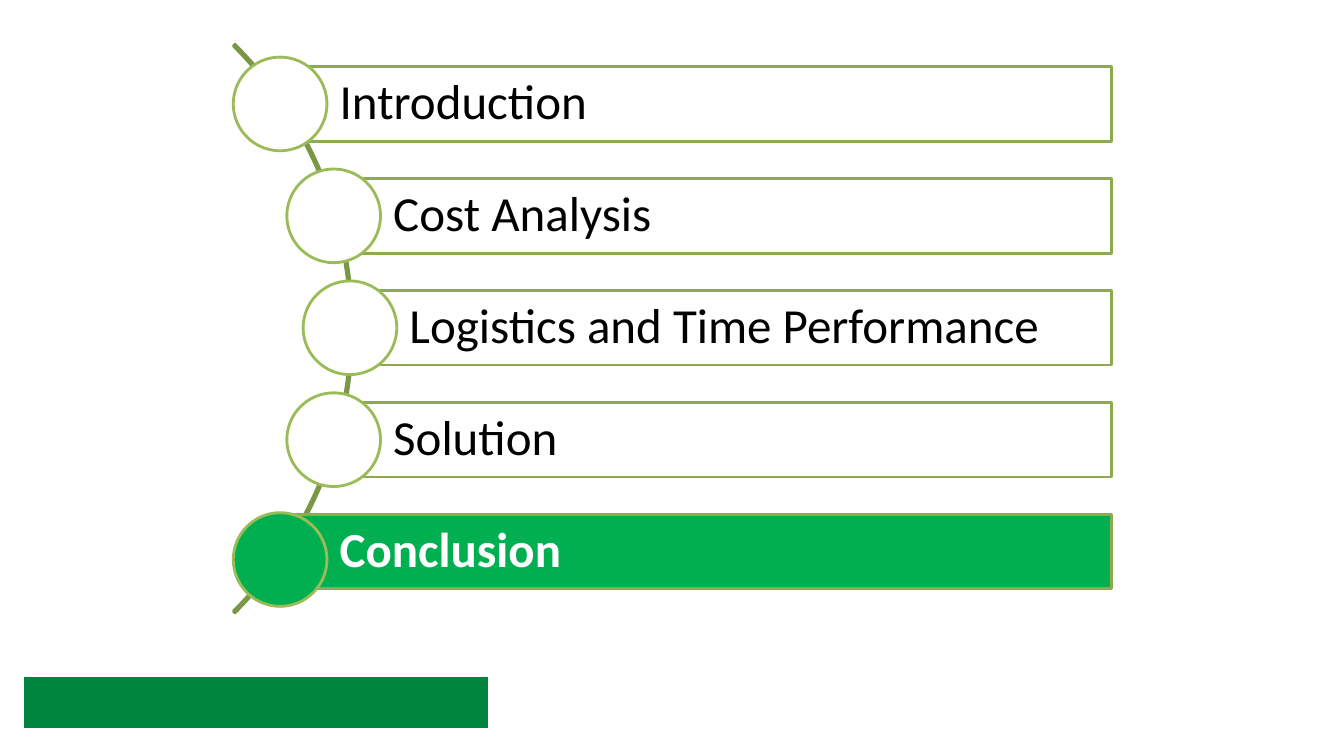
"""Build an agenda slide with five steps along an arc, the last one highlighted."""
import dataclasses

import pptx
import pptx.dml.color
import pptx.enum.shapes
import pptx.enum.text
import pptx.shapes.autoshape
import pptx.slide
import pptx.util

Cm = pptx.util.Cm
Kind = pptx.enum.shapes.MSO_SHAPE

COLOURS = {
    "white": "FFFFFF",
    "black": "000000",
    "highlight": "00B050",
    "footer": "00853E",
    "arc": "7C9647",
    "bar_line": "8DAA51",
    "circle_line": "9BBB59",
}
FONT = "Calibri"
BAR_TOP, BAR_PITCH, BAR_HEIGHT, BAR_RIGHT = 1.68, 2.82, 1.88, 28.01
CIRCLE_SIZE = 2.36
ARC_CENTRE_X, ARC_CENTRE_Y, ARC_RADIUS = -1.24, 8.28, 10.13


@dataclasses.dataclass(frozen=True)
class Step:
    """One agenda entry: its label, bar position and emphasis."""

    label: str
    left: float
    active: bool = False
    circle_drop: float = 0


STEPS = (
    Step("Introduction", 7.06),
    Step("Cost Analysis", 8.41),
    Step("Logistics and Time Performance", 8.82),
    Step("Solution", 8.41),
    Step("Conclusion", 7.06, active=True, circle_drop=0.2),
)


def colour(name: str) -> pptx.dml.color.RGBColor:
    """Return the named palette colour."""
    return pptx.dml.color.RGBColor.from_string(COLOURS[name])


def add_figure(
    page: pptx.slide.Slide,
    kind: Kind,
    left: float,
    top: float,
    width: float,
    height: float,
    fill: str | None,
    line: str,
    weight: float = 2,
) -> pptx.shapes.autoshape.Shape:
    """Add a flat preset shape measured in centimetres."""
    figure = page.shapes.add_shape(kind, Cm(left), Cm(top), Cm(width), Cm(height))
    figure.shadow.inherit = False
    if fill is None:
        figure.fill.background()
    else:
        figure.fill.solid()
        figure.fill.fore_color.rgb = colour(fill)
    figure.line.color.rgb = colour(line)
    figure.line.width = pptx.util.Pt(weight)
    return figure


def add_label(bar: pptx.shapes.autoshape.Shape, step: Step) -> None:
    """Write the step's label inside its bar."""
    frame = bar.text_frame
    frame.word_wrap = True
    frame.vertical_anchor = pptx.enum.text.MSO_ANCHOR.MIDDLE
    frame.margin_left = Cm(1.5)
    frame.margin_top = frame.margin_right = frame.margin_bottom = Cm(0.25)
    para = frame.paragraphs[0]
    para.alignment = pptx.enum.text.PP_ALIGN.LEFT
    para.line_spacing = 0.9
    span = para.add_run()
    span.text = step.label
    span.font.name = FONT
    span.font.size = pptx.util.Pt(35)
    span.font.bold = step.active
    span.font.color.rgb = colour("white" if step.active else "black")


def add_step(page: pptx.slide.Slide, step: Step, index: int) -> None:
    """Draw a step's bar and the circle centred on its left edge."""
    top = BAR_TOP + index * BAR_PITCH
    fill = "highlight" if step.active else "white"
    bar = add_figure(page, Kind.RECTANGLE, step.left, top, BAR_RIGHT - step.left,
                     BAR_HEIGHT, fill, "bar_line")
    add_label(bar, step)
    circle_top = top + (BAR_HEIGHT - CIRCLE_SIZE) / 2 + step.circle_drop
    add_figure(page, Kind.OVAL, step.left - CIRCLE_SIZE / 2, circle_top,
               CIRCLE_SIZE, CIRCLE_SIZE, fill, "circle_line")


def add_arc(page: pptx.slide.Slide) -> None:
    """Draw the thin arc that links the circles."""
    arc = add_figure(page, Kind.BLOCK_ARC, ARC_CENTRE_X - ARC_RADIUS,
                     ARC_CENTRE_Y - ARC_RADIUS, 2 * ARC_RADIUS, 2 * ARC_RADIUS,
                     None, "arc")
    for position, value in enumerate((189, 27, 0.003)):
        arc.adjustments[position] = value


def main() -> None:
    """Build and save the deck."""
    deck = pptx.Presentation()
    deck.slide_width, deck.slide_height = Cm(33.87), Cm(19.05)
    page = deck.slides.add_slide(deck.slide_layouts.get_by_name("Blank"))
    add_arc(page)
    for index, step in enumerate(STEPS):
        add_step(page, step, index)
    add_figure(page, Kind.RECTANGLE, 0.63, 17.07, 11.66, 1.27, "footer", "footer", 0.75)
    deck.save("out.pptx")


if __name__ == "__main__":
    main()
